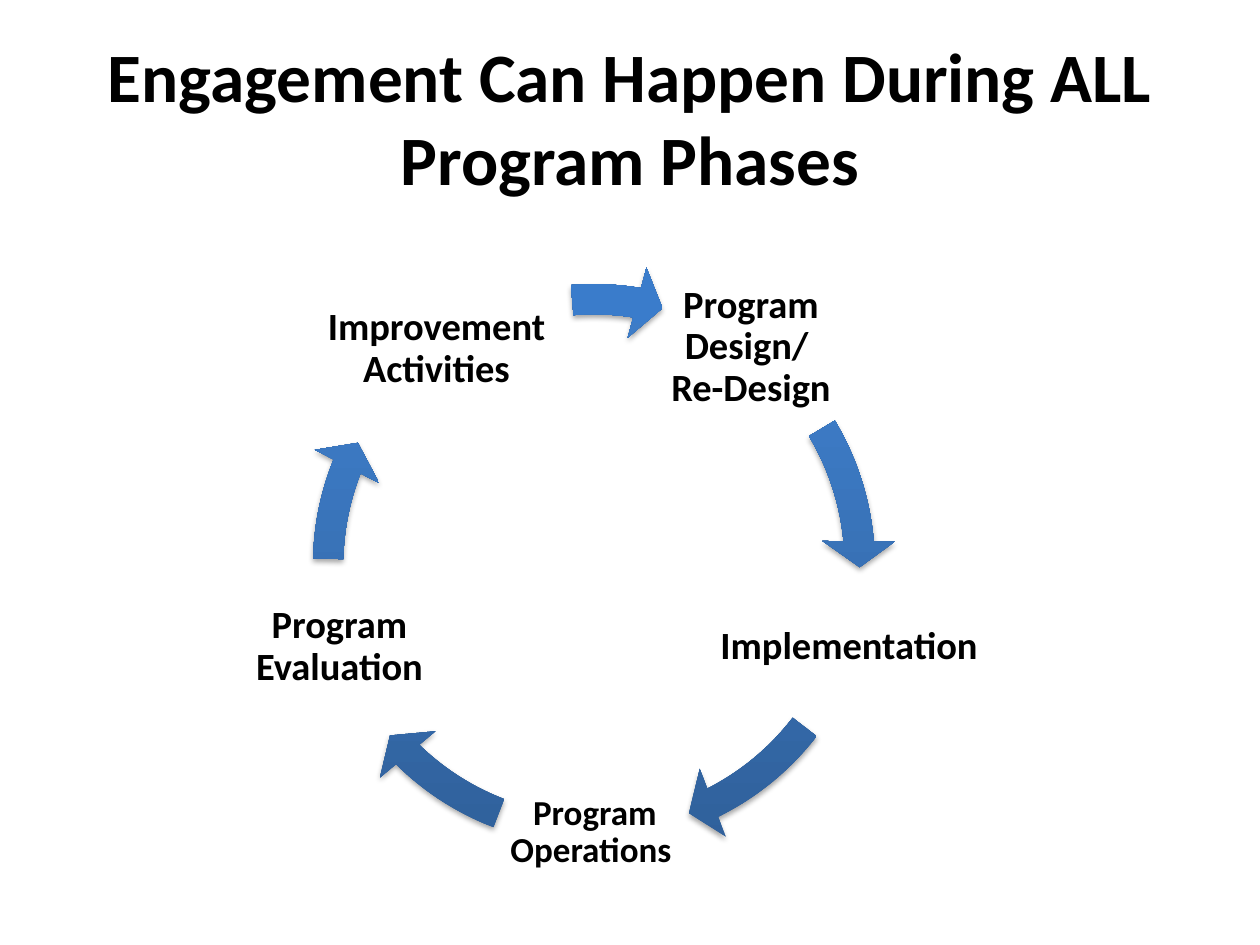
from copy import deepcopy
from lxml import etree
from pptx import Presentation
from pptx import util as u
from pptx.dml.color import RGBColor
from pptx.enum import shapes, text

SCALE = 914400 / 126
FONT = "Calibri"
INK = "000000"
RING = (292, 263, 604, 604)
BLEND = [(0, "2F5F99"), (0.8, "3D7CC7"), (1, "3A7CCB")]
PHASES = [
    ("Program Design/ \vRe-Design", 22, (663, 268, 176, 159)),
    ("Implementation", 22, (674, 567, 350, 161)),
    ("Program Operations ", 20, (499, 723, 192, 219)),
    ("Program Evaluation", 22, (236, 558, 207, 178)),
    ("Improvement Activities", 22, (301, 255, 271, 188)),
]
SWEEPS = [(212.93, 197.44), (38.07, 22.53), (80.7, 66.58),
          (121.05, 108.8), (167.61, 159.19)]
GLOW = (
    '<a:effectLst xmlns:a="http://schemas.openxmlformats.org/drawingml/2006/main">'
    '<a:outerShdw blurRad="40000" dist="23000" dir="5400000" rotWithShape="0">'
    '<a:srgbClr val="000000"><a:alpha val="35000"/></a:srgbClr>'
    '</a:outerShdw></a:effectLst>'
)


def px(num):
    return u.Emu(round(num * SCALE))


def hue(code):
    return RGBColor.from_string(code)


def put(item, vals):
    for key, val in vals.items():
        setattr(item, key, val)


def style(frame, words, size):
    put(frame, {"text": words, "word_wrap": True,
                "auto_size": text.MSO_AUTO_SIZE.NONE,
                "vertical_anchor": text.MSO_ANCHOR.MIDDLE})
    para = frame.paragraphs[0]
    para.alignment = text.PP_ALIGN.CENTER
    for run in para.runs:
        put(run.font, {"name": FONT, "size": u.Pt(size), "bold": True})
        run.font.color.rgb = hue(INK)
    return para


def head(slide, words):
    title = slide.shapes.title
    put(title, {"left": px(63), "top": px(38),
                "width": px(1134), "height": px(157)})
    style(title.text_frame, words, 39.6)


def label(slide, words, size, box):
    frame = slide.shapes.add_textbox(*map(px, box)).text_frame
    sides = ("left", "top", "right", "bottom")
    put(frame, {f"margin_{side}": px(4) for side in sides})
    style(frame, words, size).line_spacing = 0.9


def blend(fill):
    fill.gradient()
    fill.gradient_angle = 90
    stops = fill._fill._gradFill.gsLst
    stops.append(deepcopy(stops[-1]))
    for stop, (spot, code) in zip(fill.gradient_stops, BLEND):
        stop.position = spot
        stop.color.rgb = hue(code)


def arrow(slide, end, start):
    arc = slide.shapes.add_shape(shapes.MSO_SHAPE.CIRCULAR_ARROW, *map(px, RING))
    for spot, val in enumerate((0.05, 3.36, end, start, 0.06)):
        arc.adjustments[spot] = val
    blend(arc.fill)
    arc.line.fill.background()
    arc._element.spPr.append(etree.fromstring(GLOW))


def main():
    deck = Presentation()
    put(deck, {"slide_width": px(1260), "slide_height": px(945)})
    slide = deck.slides.add_slide(deck.slide_layouts[5])
    head(slide, "Engagement Can Happen During ALL Program Phases")
    for phase, sweep in zip(PHASES, SWEEPS):
        label(slide, *phase)
        arrow(slide, *sweep)
    deck.save("out.pptx")


if __name__ == "__main__":
    main()
